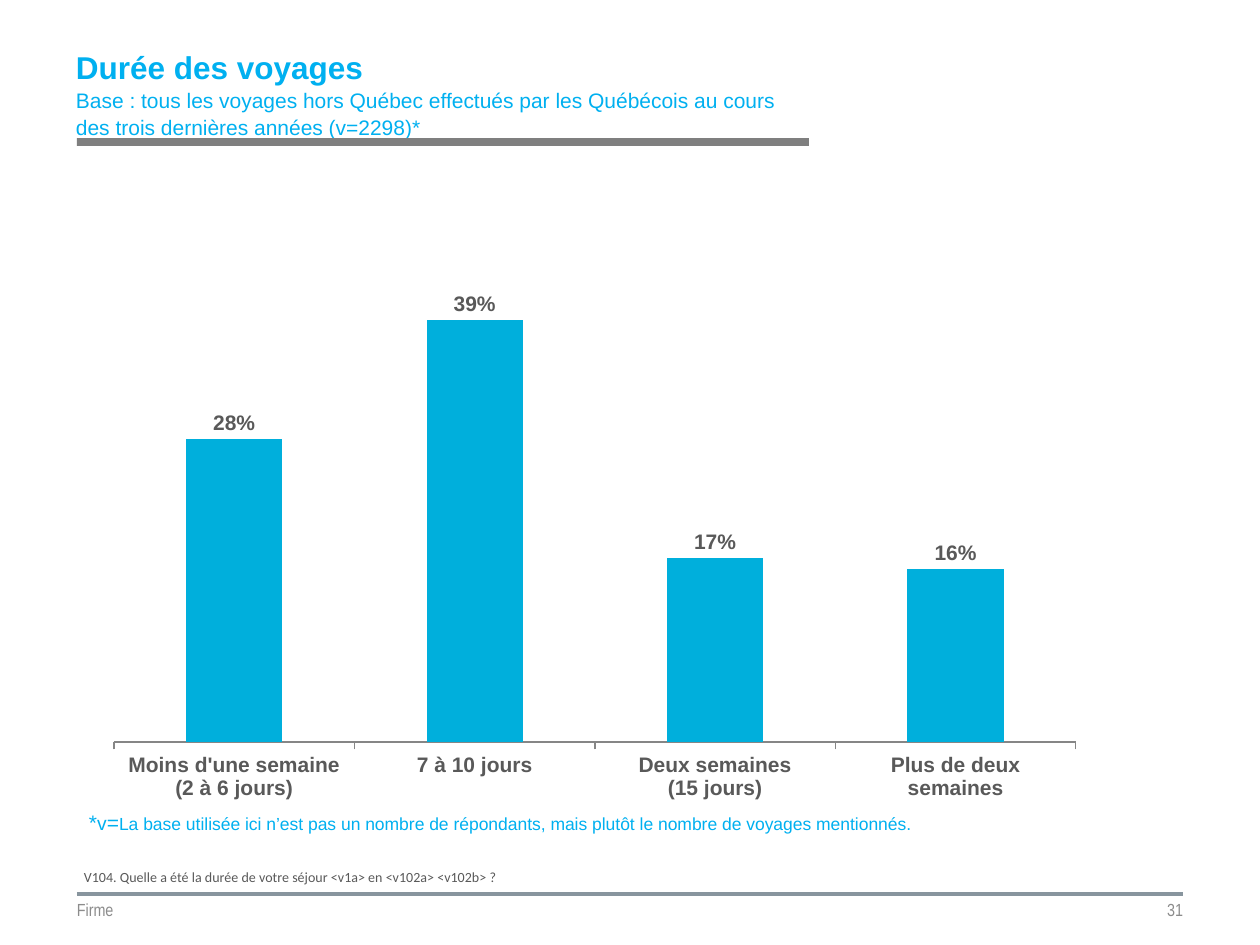
from lxml import etree
from pptx import Presentation
from pptx.chart.data import CategoryChartData
from pptx.dml.color import RGBColor
from pptx.enum.chart import XL_CHART_TYPE, XL_LABEL_POSITION, XL_TICK_LABEL_POSITION, XL_TICK_MARK
from pptx.enum.shapes import MSO_CONNECTOR, MSO_SHAPE
from pptx.enum.text import MSO_ANCHOR, PP_ALIGN
from pptx.oxml.ns import qn
from pptx.util import Pt

COLUMN = XL_CHART_TYPE.COLUMN_CLUSTERED
OUTSIDE_END = XL_LABEL_POSITION.OUTSIDE_END
NO_LABELS = XL_TICK_LABEL_POSITION.NONE
TICK_OUT, TICK_NONE = XL_TICK_MARK.OUTSIDE, XL_TICK_MARK.NONE
STRAIGHT = MSO_CONNECTOR.STRAIGHT
RECTANGLE = MSO_SHAPE.RECTANGLE
TOP, MIDDLE = MSO_ANCHOR.TOP, MSO_ANCHOR.MIDDLE
LEFT, RIGHT = PP_ALIGN.LEFT, PP_ALIGN.RIGHT

EMU_PER_PX = 914400 / 126
COLORS = {
    "title": "00B0F0",
    "bar": "00AFDC",
    "rule": "7F7F7F",
    "text": "595959",
    "footer": "8C8C8C",
    "footer_line": "88959E",
    "axis": "868686",
}


def px(length):
    return round(length * EMU_PER_PX)


def color(name):
    return RGBColor.from_string(COLORS[name])


def style_font(font, name, size, color_name, bold=False):
    for key, value in {"name": name, "size": Pt(size), "bold": bold}.items():
        setattr(font, key, value)
    font.color.rgb = color(color_name)


def add_text(page, box, paragraphs, font_name, color_name, anchor=TOP, align=LEFT,
             insets=(0, 0), spacing=1.0):
    frame = page.shapes.add_textbox(*map(px, box)).text_frame
    side, edge = map(px, insets)
    settings = {
        "word_wrap": True, "vertical_anchor": anchor,
        "margin_left": side, "margin_right": side,
        "margin_top": edge, "margin_bottom": edge,
    }
    for key, value in settings.items():
        setattr(frame, key, value)
    for index, spans in enumerate(paragraphs):
        para = frame.add_paragraph() if index else frame.paragraphs[0]
        para.alignment = align
        para.line_spacing = spacing
        for text, size, bold in spans:
            span = para.add_run()
            span.text = text
            style_font(span.font, font_name, size, color_name, bold)


def add_heading(page, box):
    left, top, width, height = box
    subtitle = ("Base : tous les voyages hors Québec effectués par les Québécois "
                "au cours des trois dernières années (v=2298)*")
    add_text(page, (left, top, width, height - 16),
             [[("Durée des voyages", 18, True)], [(subtitle, 12, False)]],
             "Arial", "title", anchor=MIDDLE, spacing=1.08)
    rule = page.shapes.add_shape(
        RECTANGLE, px(left + 1), px(top + height - 8), px(width + 1), px(8))
    rule.shadow.inherit = False
    rule.fill.solid()
    rule.fill.fore_color.rgb = color("rule")
    rule.line.fill.background()


def set_plot_layout(chart, **fractions):
    plot_area = chart.plots[0]._element.getparent()
    for old in plot_area.findall(qn("c:layout")):
        plot_area.remove(old)
    layout = etree.Element(qn("c:layout"))
    plot_area.insert(0, layout)
    manual = etree.SubElement(layout, qn("c:manualLayout"))
    values = {"layoutTarget": "inner", "xMode": "edge", "yMode": "edge", **fractions}
    for tag, value in values.items():
        etree.SubElement(manual, qn(f"c:{tag}")).set("val", str(value))


def add_duration_chart(page, box):
    data = CategoryChartData(number_format="0%")
    data.categories = ["Moins d'une semaine\n(2 à 6 jours)", "7 à 10 jours",
                       "Deux semaines\n(15 jours)", "Plus de deux semaines"]
    data.add_series("Series 1", (0.28, 0.39, 0.17, 0.16))
    chart = page.shapes.add_chart(COLUMN, *map(px, box), data).chart
    chart.has_legend = False
    chart.has_title = False
    style_font(chart.font, "Arial", 12, "text", True)
    set_plot_layout(chart, x=0.02, y=0.02, w=0.96, h=0.86)

    value_axis = chart.value_axis
    value_settings = {
        "minimum_scale": 0, "maximum_scale": 0.45, "has_major_gridlines": False,
        "major_tick_mark": TICK_NONE, "tick_label_position": NO_LABELS, "visible": False,
    }
    for key, value in value_settings.items():
        setattr(value_axis, key, value)

    category_axis = chart.category_axis
    category_axis.major_tick_mark = TICK_OUT
    category_axis.format.line.color.rgb = color("axis")
    style_font(category_axis.tick_labels.font, "Arial", 12, "text", True)

    plot = chart.plots[0]
    plot.gap_width = 150
    plot.vary_by_categories = False
    fill = plot.series[0].format.fill
    fill.solid()
    fill.fore_color.rgb = color("bar")
    plot.has_data_labels = True
    labels = plot.data_labels
    label_settings = {
        "show_value": True, "position": OUTSIDE_END,
        "number_format": "0%", "number_format_is_linked": False,
    }
    for key, value in label_settings.items():
        setattr(labels, key, value)
    style_font(labels.font, "Arial", 12, "text", True)


def add_notes(page, box):
    left, top, width, height = box
    base_note = [
        ("*", 12, False), ("v", 11, False), ("=", 12, False),
        ("La base utilisée ici n’est pas un nombre de répondants, "
         "mais plutôt le nombre de voyages mentionnés.", 10, False),
    ]
    question = "V104. Quelle a été la durée de votre séjour <v1a> en <v102a> <v102b> ?"
    add_text(page, (left + 5, top, width, 38), [base_note], "Arial", "title", insets=(13, 6))
    add_text(page, (left, top + height - 29, width, 29), [[(question, 8, False)]],
             "Calibri", "text", insets=(13, 6))


def add_footer(page, box):
    left, top, width, height = box
    for line_top in (top, top + 2):
        line = page.shapes.add_connector(
            STRAIGHT, px(left), px(line_top), px(left + width), px(line_top))
        line.line.color.rgb = color("footer_line")
        line.line.width = Pt(1.5)
        etree.SubElement(line._element.spPr, qn("a:effectLst"))
    half = width // 2
    for offset, text, align in ((0, "Firme", LEFT), (half, "31", RIGHT)):
        add_text(page, (left + offset, top, half, height), [[(text, 10, False)]],
                 "Arial Narrow", "footer", anchor=MIDDLE, align=align)


def main():
    deck = Presentation()
    deck.slide_width, deck.slide_height = px(1260), px(945)
    page = deck.slides.add_slide(deck.slide_layouts[6])
    add_heading(page, (76, 55, 731, 91))
    add_duration_chart(page, (94, 244, 1002, 566))
    add_notes(page, (71, 804, 1097, 88))
    add_footer(page, (77, 893, 1106, 33))
    deck.save("out.pptx")


if __name__ == "__main__":
    main()
